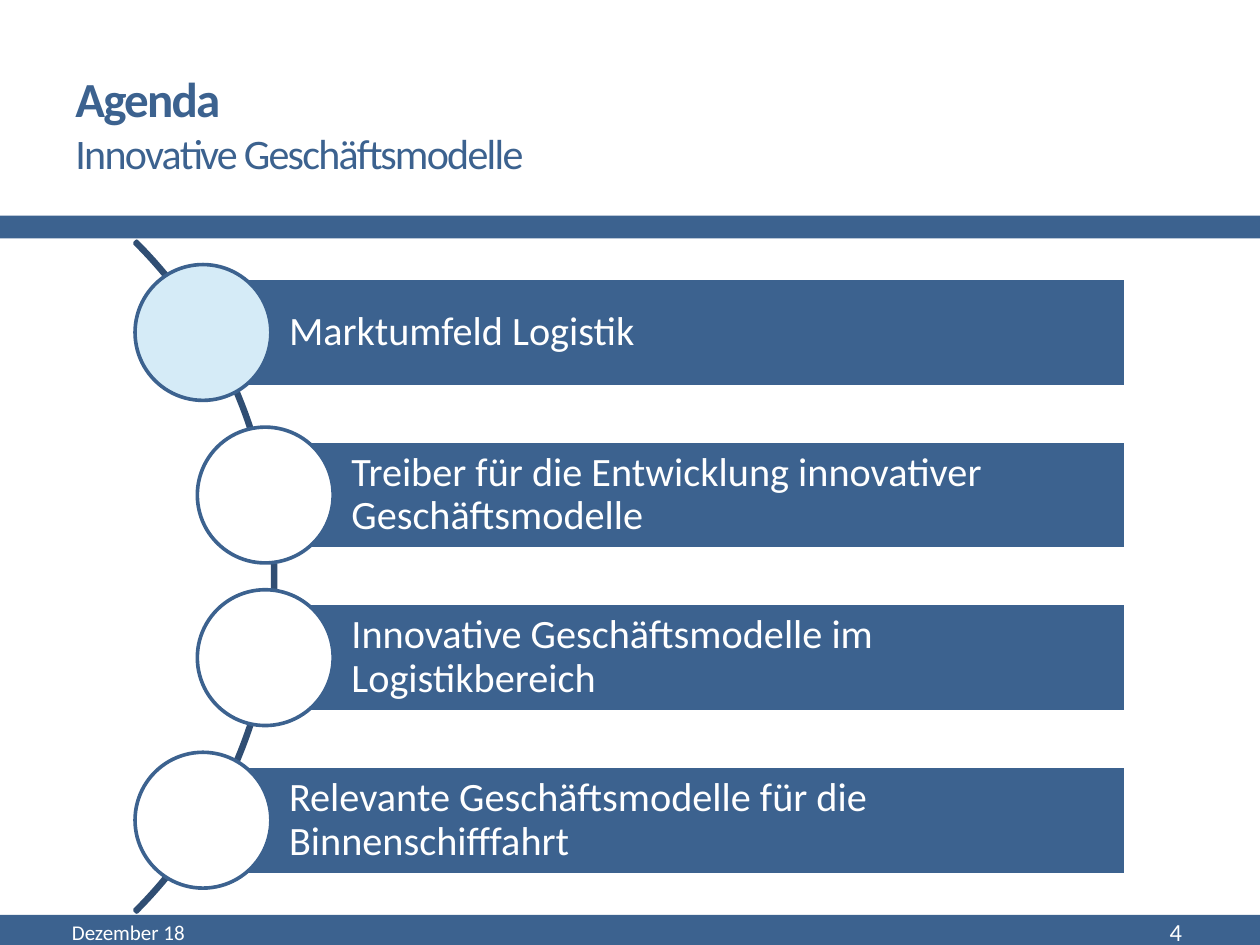
"""Build the agenda slide with four topics along an arc."""
from pptx import Presentation
from pptx.dml.color import RGBColor
from pptx.enum.shapes import MSO_SHAPE as SHAPE
from pptx.enum.text import MSO_ANCHOR as ANCHOR, PP_ALIGN as ALIGN
from pptx.util import Pt

BLUE, DARK, LIGHT, WHITE = "3C628F", "304E73", "D5EBF7", "FFFFFF"


def add_box(kind, x, y, w, h, fill=None, line=None):
    s = slide.shapes.add_shape(kind, Pt(x), Pt(y), Pt(w), Pt(h))
    s.shadow.inherit = False
    for part, color in ((s.fill, fill), (s.line.fill, line)):
        if color:
            part.solid()
            part.fore_color.rgb = RGBColor.from_string(color)
        else:
            part.background()
    if line:
        s.line.width = Pt(2.08)
    return s


def set_text(s, text, sizes, color, align=ALIGN.LEFT):
    tf = s.text_frame
    tf.word_wrap = True
    tf.vertical_anchor = ANCHOR.MIDDLE
    p = tf.paragraphs[0]
    p.text = text
    p.alignment = align
    for r, size in zip(p.runs, sizes):
        r.font.name = "Calibri"
        r.font.size = Pt(size)
        r.font.color.rgb = RGBColor.from_string(color)
    return p


prs = Presentation()
prs.slide_width, prs.slide_height = Pt(720), Pt(540)
slide = prs.slides.add_slide(prs.slide_layouts[6])

for y, h in ((522.8, 17.2), (123.2, 13)):
    add_box(SHAPE.RECTANGLE, 0, y, 720, h, BLUE)

s = slide.shapes.add_textbox(Pt(36), Pt(31.7), Pt(375), Pt(77.8))
p = set_text(s, "Agenda\vInnovative Geschäftsmodelle", (28, 24), BLUE)
p.runs[0].font.bold = True
for r in p.runs:
    r.font._element.set("spc", "-100")

for text, x, w, size, align in (
    ("Dezember 18", 34, 228, 12, ALIGN.LEFT),
    ("4", 598.3, 84.2, 14, ALIGN.RIGHT),
):
    s = slide.shapes.add_textbox(Pt(x), Pt(519.4), Pt(w), Pt(26))
    set_text(s, text, (size,), WHITE, align)

arc = add_box(SHAPE.BLOCK_ARC, -384.5, 58.5, 542, 542, line=DARK)
for i, value in enumerate((189, 27, 0.003)):
    arc.adjustments[i] = value

topics = (
    ("Marktumfeld Logistik", 116, LIGHT),
    ("Treiber für die Entwicklung innovativer Geschäftsmodelle", 151.6, WHITE),
    ("Innovative Geschäftsmodelle im Logistikbereich", 151.6, WHITE),
    ("Relevante Geschäftsmodelle für die Binnenschifffahrt", 116, WHITE),
)
right, bar_h, dot, pitch = 643.2, 62, 77.6, 92.9
for i, (text, x, fill) in enumerate(topics):
    y = 159 + i * pitch
    s = add_box(SHAPE.RECTANGLE, x, y, right - x, bar_h, BLUE, WHITE)
    p = set_text(s, text, (23,), WHITE)
    p.line_spacing = 0.9
    tf = s.text_frame
    tf.margin_left = Pt(49.2)
    tf.margin_right = tf.margin_top = tf.margin_bottom = Pt(4.6)
    add_box(SHAPE.OVAL, x - dot / 2, y + (bar_h - dot) / 2, dot, dot, fill, BLUE)

prs.save("out.pptx")
